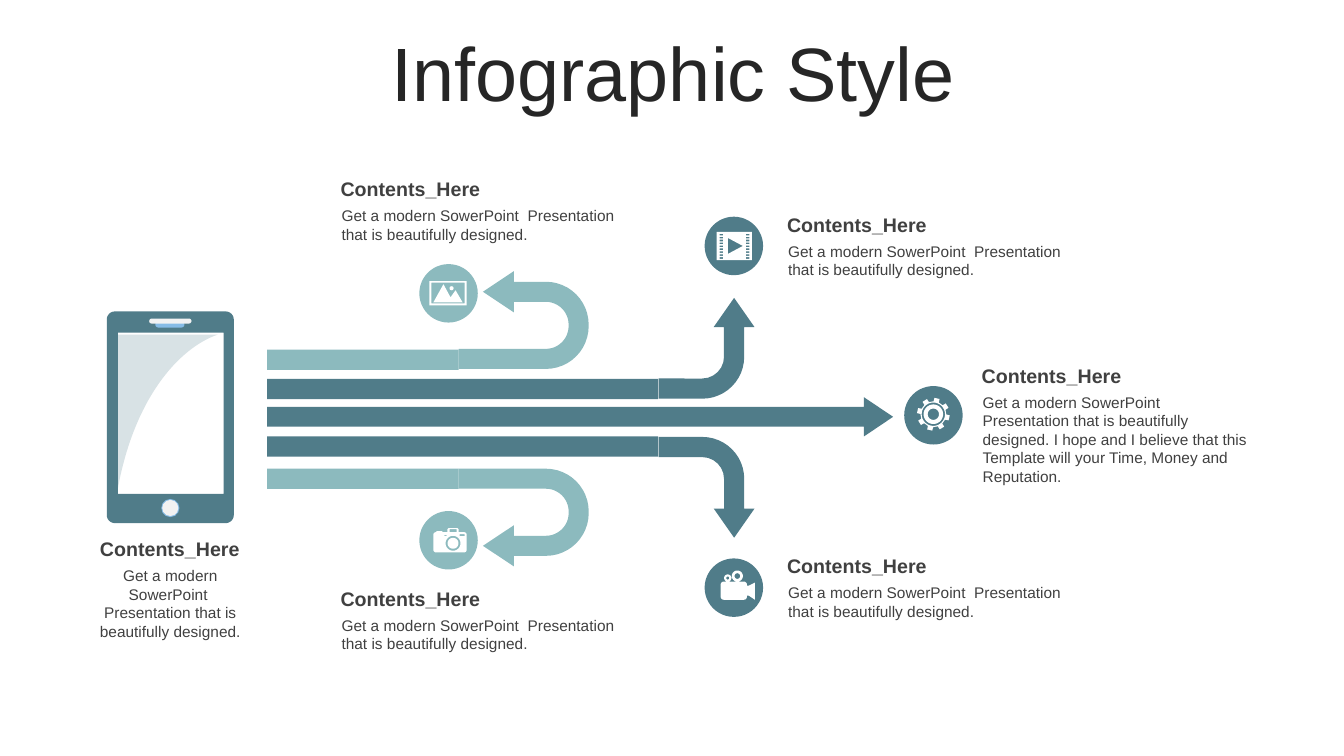
from math import cos, pi, radians, sin

from lxml import etree
from pptx import Presentation
from pptx.dml.color import RGBColor
from pptx.enum.shapes import MSO_SHAPE
from pptx.enum.text import MSO_ANCHOR, MSO_AUTO_SIZE, PP_ALIGN
from pptx.oxml.ns import qn
from pptx.util import Inches, Pt

LEFT, CENTER = PP_ALIGN.LEFT, PP_ALIGN.CENTER
TOP, MIDDLE = MSO_ANCHOR.TOP, MSO_ANCHOR.MIDDLE
GROW, FIXED = MSO_AUTO_SIZE.SHAPE_TO_FIT_TEXT, MSO_AUTO_SIZE.NONE
RECT, ROUND, OVAL = MSO_SHAPE.RECTANGLE, MSO_SHAPE.ROUNDED_RECTANGLE, MSO_SHAPE.OVAL
STRAIGHT, BENT, UTURN = MSO_SHAPE.RIGHT_ARROW, MSO_SHAPE.BENT_ARROW, MSO_SHAPE.U_TURN_ARROW

TEAL, MINT, SKY, PALE, WHITE = "507C89", "8CBABE", "87BCE6", "F2F2F2", "FFFFFF"
INK, GREY = "262626", "404040"
BENT_ADJ = (0.211, 0.213, 0.304, 0.438)
UTURN_ADJ = (0.205, 0.211, 0.317, 0.438, 0.813)
HEADING = "Contents_Here"
BLURB = "Get a modern SowerPoint  Presentation that is beautifully designed."
LONG_BLURB = BLURB + " I hope and I believe that this Template will your Time, Money and Reputation."


def cells(count):
    return Inches(count / 10)


def rgb(hex_color):
    return RGBColor.from_string(hex_color)


def apply(target, values):
    for name, value in values.items():
        setattr(target, name, value)


def paint(shape, color, opacity=100):
    shape.shadow.inherit = False
    shape.fill.solid()
    shape.fill.fore_color.rgb = rgb(color)
    shape.line.fill.background()
    if opacity < 100:
        tint = shape.element.find(".//" + qn("a:srgbClr"))
        etree.SubElement(tint, qn("a:alpha")).set("val", str(opacity * 1000))


def preset(slide, kind, box, color, adjust=(), rotation=0, mirrored=False):
    shape = slide.shapes.add_shape(kind, *map(cells, box))
    paint(shape, color)
    shape.rotation = rotation
    for index, value in enumerate(adjust):
        shape.adjustments[index] = value
    if mirrored:
        shape.element.find(".//" + qn("a:xfrm")).set("flipH", "1")


def outline(slide, contours, color, opacity=100):
    builder = None
    for contour in contours:
        start, *rest = [(cells(x), cells(y)) for x, y in contour]
        if builder is None:
            builder = slide.shapes.build_freeform(*start)
        else:
            builder.move_to(*start)
        builder.add_line_segments(rest, close=True)
    paint(builder.convert_to_shape(), color, opacity)


def block(x, y, width, height):
    return [(x, y), (x + width, y), (x + width, y + height), (x, y + height)]


def arc(x, y, radius, start=0, sweep=360, steps=32):
    angles = [radians(start + sweep * i / steps) for i in range(steps + 1)]
    return [(x + radius * cos(a), y + radius * sin(a)) for a in angles]


def rounded(x, y, width, height, radius):
    right, bottom = x + width - radius, y + height - radius
    corners = [(right, bottom), (x + radius, bottom), (x + radius, y + radius), (right, y + radius)]
    return [point for i, (cx, cy) in enumerate(corners)
            for point in arc(cx, cy, radius, 90 * i, 90, 8)]


def bezier(p0, p1, p2, p3, steps=32):
    points = []
    for t in (i / steps for i in range(steps + 1)):
        weights = ((1 - t) ** 3, 3 * t * (1 - t) ** 2, 3 * t * t * (1 - t), t ** 3)
        points.append(tuple(sum(w * p[axis] for w, p in zip(weights, (p0, p1, p2, p3)))
                            for axis in (0, 1)))
    return points


def write(slide, text, box, size, color=GREY, bold=False, align=LEFT,
          anchor=TOP, fit=GROW, spacing=None):
    frame = slide.shapes.add_textbox(*map(cells, box)).text_frame
    apply(frame, dict(word_wrap=True, auto_size=fit, vertical_anchor=anchor))
    paragraph = frame.paragraphs[0]
    apply(paragraph, dict(spacing or {}, alignment=align))
    run = paragraph.add_run()
    run.text = text
    apply(run.font, dict(name="Arial", size=Pt(size), bold=bold))
    run.font.color.rgb = rgb(color)


def caption(slide, left, top, width, blurb=BLURB, height=4.7, align=LEFT):
    write(slide, blurb, (left + 0.1, top + 2.9, width - 0.1, height), 11, align=align)
    write(slide, HEADING, (left, top, width, 3.4), 14, bold=True, align=align)


def phone(slide):
    outline(slide, [rounded(10.6, 30.9, 12.6, 21, 0.8), block(11.7, 33, 10.5, 16)], TEAL)
    preset(slide, ROUND, (15.4, 31.9, 2.9, 0.6), SKY, (0.5,))
    preset(slide, OVAL, (16, 49.5, 1.8, 1.8), SKY)
    glare = bezier((11.6, 49), (13.2, 39.5), (17.8, 34.5), (21.6, 33.2))
    outline(slide, [[(11.6, 33.2)] + glare], TEAL, 22)
    preset(slide, ROUND, (14.8, 31.6, 4.2, 0.5), PALE, (0.5,))
    preset(slide, OVAL, (16.1, 49.6, 1.6, 1.6), PALE)


def flow(slide):
    preset(slide, STRAIGHT, (26.5, 39.4, 62.1, 3.9), TEAL, (0.5, 0.742))
    for bend, bend_top, turn_top, stem_top, tail_top, up in (
            (65.1, 29.8, 25.3, 37.6, 34.7, True),
            (65.1, 43.6, 44.9, 43.3, 46.5, False)):
        preset(slide, BENT, (bend, bend_top, 10, 9.5), TEAL, BENT_ADJ, 90, up)
        preset(slide, RECT, (26.5, stem_top, 38.8, 2), TEAL)
        preset(slide, UTURN, (47.1, turn_top, 9.7, 12.9), MINT, UTURN_ADJ, 90, up)
        preset(slide, RECT, (26.5, tail_top, 19, 2), MINT)


def film_icon(slide):
    holes = [block(x, 23.2 + 0.29 * row, 0.35, 0.16) for row in range(9) for x in (71.4, 74)]
    play = [(72.2, 23.6), (72.2, 25.2), (73.7, 24.4)]
    outline(slide, [block(71.1, 23, 3.5, 2.8), play] + holes, WHITE)


def photo_icon(slide):
    peaks = [(44, 28.2), (44.7, 29.5), (45.2, 28.8), (45.9, 30), (43, 30)]
    outline(slide, [block(42.6, 27.9, 3.7, 2.4), block(42.8, 28.05, 3.3, 2.05),
                    peaks, arc(44.8, 28.6, 0.2)], WHITE)


def gear_icon(slide):
    x, y = 92.6, 41.1
    rim = []
    for tooth in range(8):
        for offset, radius in ((-12, 1.28), (-9, 1.63), (9, 1.63), (12, 1.28)):
            angle = (tooth * 45 + offset - 77) * pi / 180
            rim.append((x + radius * cos(angle), y + radius * sin(angle)))
    outline(slide, [rim] + [arc(x, y, radius) for radius in (1.16, 0.97, 0.56)], WHITE)


def camera_icon(slide):
    body = [(43.2, 52.8), (43.3, 52.8), (43.3, 52.7), (43.9, 52.7), (43.9, 52.8), (44.4, 52.8),
            (44.4, 52.5), (44.5, 52.4), (45.4, 52.4), (45.5, 52.5), (45.5, 52.8)]
    body += arc(46.05, 53.05, 0.25, 270, 90, 8) + arc(46.05, 54.55, 0.25, 0, 90, 8)
    body += arc(43.25, 54.55, 0.25, 90, 90, 8) + arc(43.25, 53.05, 0.25, 180, 90, 8)
    outline(slide, [body, block(44.6, 52.5, 0.7, 0.3), block(44.1, 53.1, 0.2, 0.1),
                    block(45.6, 53, 0.5, 0.2), arc(44.95, 53.9, 0.74), arc(44.95, 53.9, 0.54)], WHITE)


def movie_icon(slide):
    body = arc(73.8, 58, 0.3, 270, 90, 8) + [(74.1, 58.1), (74.3, 58.1), (74.9, 57.8),
                                            (74.9, 59.5), (74.3, 59.1), (74.1, 59.1)]
    body += arc(73.8, 59.2, 0.3, 0, 90, 8) + arc(71.8, 59.2, 0.3, 90, 90, 8)
    body += arc(71.8, 58, 0.3, 180, 90, 8)
    reels = [arc(x, y, radius) for x, y, radii in
             ((72.2, 57.35, (0.36, 0.15)), (73.15, 57.15, (0.55, 0.28))) for radius in radii]
    outline(slide, [body] + reels, WHITE)


def main():
    deck = Presentation()
    deck.slide_width, deck.slide_height = cells(133.33), cells(75)
    slide = deck.slides.add_slide(deck.slide_layouts[6])
    write(slide, "Infographic Style", (3.5, 3.7, 126.6, 7.9), 54, INK, align=CENTER,
          anchor=MIDDLE, fit=FIXED, spacing=dict(line_spacing=0.9, space_before=Pt(10)))
    phone(slide)
    flow(slide)
    caption(slide, 7.2, 52.8, 19.3, height=8.4, align=CENTER)
    for left, top, width in ((77.1, 20.6, 29.2), (77.1, 54.5, 29.2),
                             (32.8, 17.1, 29.9), (32.8, 57.7, 29.9)):
        caption(slide, left, top, width)
    caption(slide, 96.4, 35.6, 29.1, LONG_BLURB, 8.4)
    for left, top, color, icon in ((69.9, 21.5, TEAL, film_icon), (69.9, 55.4, TEAL, movie_icon),
                                   (89.7, 38.3, TEAL, gear_icon), (41.6, 26.2, MINT, photo_icon),
                                   (41.6, 50.7, MINT, camera_icon)):
        preset(slide, OVAL, (left, top, 5.8, 5.8), color)
        icon(slide)
    deck.save("out.pptx")


if __name__ == "__main__":
    main()
